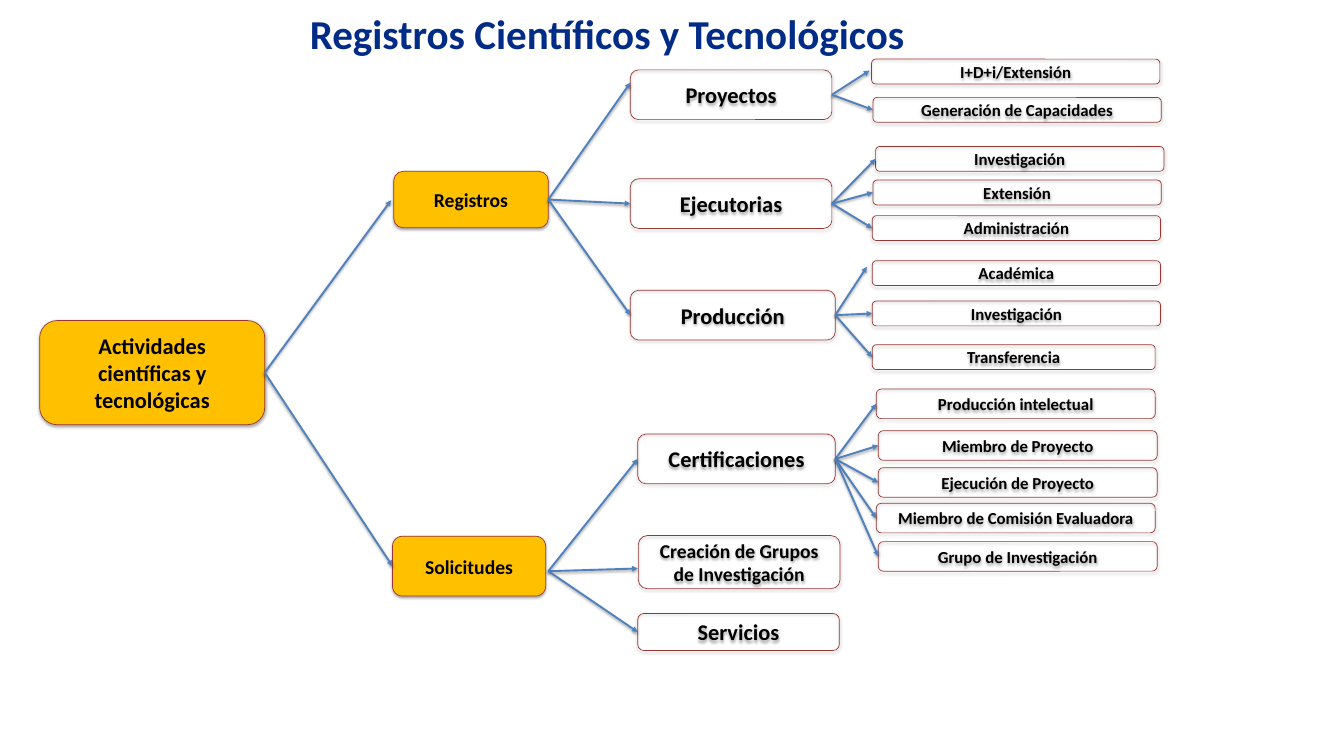
from lxml import etree
from pptx import Presentation
from pptx.dml.color import RGBColor
from pptx.enum.shapes import MSO_CONNECTOR, MSO_SHAPE
from pptx.enum.text import MSO_ANCHOR, PP_ALIGN
from pptx.oxml import parse_xml
from pptx.oxml.ns import nsdecls, qn
from pptx.util import Inches, Pt

ROUNDED = MSO_SHAPE.ROUNDED_RECTANGLE
STRAIGHT = MSO_CONNECTOR.STRAIGHT
CENTER, LEFT = PP_ALIGN.CENTER, PP_ALIGN.LEFT
MIDDLE, TOP = MSO_ANCHOR.MIDDLE, MSO_ANCHOR.TOP
LEFT_SIDE, RIGHT_SIDE = 1, 3

FONT = "Calibri"
COLORS = {"title": "002B86", "text": "000000", "gold": "FFC000",
          "border": "953735", "arrow": "4F81BD", "shadow": "000000"}

# Main boxes: text, (left, top, width, height), size, fill
ROOT = ("Actividades científicas y tecnológicas", (0.59, 4.77, 3.35, 1.55), 24, "gold")
GROUPS = [
    ("Registros", (5.86, 2.55, 2.3, 0.84), 21, "gold"),
    ("Solicitudes", (5.84, 7.98, 2.28, 0.89), 21, "gold"),
]
TOPICS = [
    ("Proyectos", (9.38, 1.04, 3, 0.74), 24, None),
    ("Ejecutorias", (9.38, 2.66, 3, 0.74), 24, None),
    ("Producción", (9.38, 4.32, 3.05, 0.74), 24, None),
    ("Certificaciones", (9.49, 6.46, 2.94, 0.74), 24, None),
    ("Creación de Grupos de Investigación", (9.5, 7.97, 3, 0.79), 21, None),
    ("Servicios", (9.49, 9.13, 3, 0.55), 24, None),
]

# Leaves of each topic: box height, then (text, left, top, width)
LEAVES = {
    "Proyectos": (0.37, [
        ("I+D+i/Extensión", 12.97, 0.88, 4.29),
        ("Generación de Capacidades", 12.99, 1.45, 4.29)]),
    "Ejecutorias": (0.37, [
        ("Investigación", 13.03, 2.18, 4.29),
        ("Extensión", 12.99, 2.68, 4.29),
        ("Administración", 12.98, 3.21, 4.29)]),
    "Producción": (0.37, [
        ("Académica", 12.98, 3.88, 4.29),
        ("Investigación", 12.98, 4.48, 4.29),
        ("Transferencia", 12.98, 5.13, 4.21)]),
    "Certificaciones": (0.44, [
        ("Producción intelectual", 13.04, 5.79, 4.15),
        ("Miembro de Proyecto", 13.07, 6.41, 4.15),
        ("Ejecución de Proyecto", 13.07, 6.96, 4.15),
        ("Miembro de Comisión Evaluadora", 13.04, 7.49, 4.15),
        ("Grupo de Investigación", 13.07, 8.06, 4.15)]),
}

# Arrow ends that lie away from the middle of a side
STARTS = {"Solicitudes": (8.16, 8.5)}
TIPS = {"Registros": (5.82, 2.98), "Proyectos": (9.38, 1.23),
        "I+D+i/Extensión": (12.94, 1.05), "Académica": (12.9, 3.97),
        "Creación de Grupos de Investigación": (9.49, 8.46)}


def rgb(name):
    return RGBColor.from_string(COLORS[name])


def style_text(p, size, color, align):
    p.alignment = align
    font = p.runs[0].font
    font.name, font.size, font.bold = FONT, Pt(size), True
    font.color.rgb = rgb(color)


def add_shadow(effects, alpha, distance):
    effects.append(parse_xml(
        f'<a:outerShdw {nsdecls("a")} blurRad="{Pt(3.1)}" dist="{Pt(distance)}" '
        f'dir="5400000" rotWithShape="0"><a:srgbClr val="{COLORS["shadow"]}">'
        f'<a:alpha val="{alpha * 1000}"/></a:srgbClr></a:outerShdw>'))


def add_title(slide, text, box):
    sp = slide.shapes.title
    sp.left, sp.top, sp.width, sp.height = map(Inches, box)
    tf = sp.text_frame
    tf.text = text
    tf.word_wrap = True
    tf.vertical_anchor = TOP
    style_text(tf.paragraphs[0], 44, "title", LEFT)


def add_box(slide, text, box, size, fill=None):
    sp = slide.shapes.add_shape(ROUNDED, *map(Inches, box))
    if fill:
        sp.fill.solid()
        sp.fill.fore_color.rgb = rgb(fill)
    else:
        sp.fill.background()
    sp.line.color.rgb = rgb("border")
    sp.line.width = Pt(0.75)
    sp.shadow.inherit = False
    add_shadow(sp._element.spPr.find(qn("a:effectLst")), 35, 1.8)
    tf = sp.text_frame
    tf.text = text
    tf.word_wrap = True
    tf.vertical_anchor = MIDDLE
    style_text(tf.paragraphs[0], size, "text", CENTER)
    return sp


def add_arrow(slide, parent, child):
    """Joins two boxes side to side, unless a free end is listed."""
    start = STARTS.get(parent.text_frame.text)
    tip = TIPS.get(child.text_frame.text)
    ends = [Inches(v) for v in (start or (0, 0)) + (tip or (0, 0))]
    line = slide.shapes.add_connector(STRAIGHT, *ends)
    if not start:
        line.begin_connect(parent, RIGHT_SIDE)
    if not tip:
        line.end_connect(child, LEFT_SIDE)
    line.line.color.rgb = rgb("arrow")
    line.line.width = Pt(2)
    etree.SubElement(line.line._get_or_add_ln(), qn("a:tailEnd"), type="triangle")
    effects = etree.SubElement(line._element.spPr, qn("a:effectLst"))
    add_shadow(effects, 38, 1.6)


def add_tree(slide):
    # Root, groups and topics
    root = add_box(slide, *ROOT)
    registros, solicitudes = [add_box(slide, *group) for group in GROUPS]
    topics = [add_box(slide, *topic) for topic in TOPICS]
    links = [(root, registros), (root, solicitudes)]
    links += [(registros, topic) for topic in topics[:3]]
    links += [(solicitudes, topic) for topic in topics[3:]]

    # Leaves
    for topic in topics:
        height, leaves = LEAVES.get(topic.text_frame.text, (0, []))
        for text, left, top, width in leaves:
            leaf = add_box(slide, text, (left, top, width, height), 18)
            links.append((topic, leaf))

    # Arrows
    for parent, child in links:
        add_arrow(slide, parent, child)


def main():
    prs = Presentation()
    prs.slide_width, prs.slide_height = Inches(20), Inches(11.25)
    slide = prs.slides.add_slide(prs.slide_layouts[5])
    add_title(slide, "Registros Científicos y Tecnológicos", (4.51, 0.08, 10.97, 0.84))
    add_tree(slide)
    prs.save("out.pptx")


if __name__ == "__main__":
    main()
